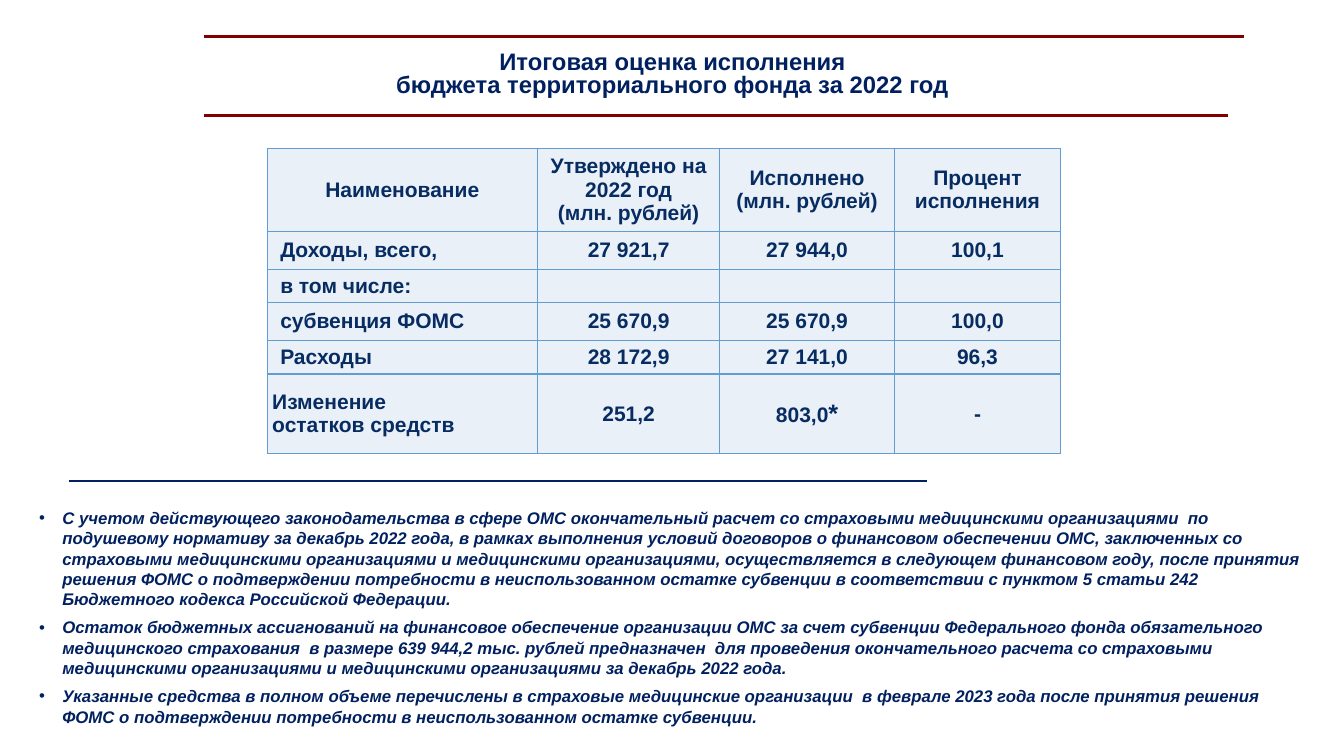
import pptx
import pptx.util
import pptx.dml.color
import pptx.enum.shapes
import pptx.enum.text
import pptx.oxml
import pptx.oxml.ns
from lxml import etree

Inches, Pt = pptx.util.Inches, pptx.util.Pt
ALIGN = pptx.enum.text.PP_ALIGN
MIDDLE = pptx.enum.text.MSO_ANCHOR.MIDDLE
qn = pptx.oxml.ns.qn
HUES = {"navy": "002060", "ink": "072C62", "red": "800000",
        "grid": "629DD1", "cell": "EAF0F7"}


def rgb(name):
    return pptx.dml.color.RGBColor.from_string(HUES[name])


def style(run, size, hue, slant=False):
    font = run.font
    font.name, font.size, font.bold = "Arial", Pt(size), True
    font.italic = slant
    font.color.rgb = rgb(hue)


deck = pptx.Presentation()
deck.slide_width, deck.slide_height = Inches(13.33), Inches(7.5)
slide = deck.slides.add_slide(deck.slide_layouts[6])

# Title
box = slide.shapes.add_textbox(Inches(0.67), Inches(0.5), Inches(12), Inches(0.49))
frame = box.text_frame
frame.word_wrap = True
frame.vertical_anchor = MIDDLE
frame.text = "Итоговая оценка исполнения\vбюджета территориального фонда за 2022 год"
title = frame.paragraphs[0]
title.alignment = ALIGN.CENTER
title.line_spacing = 0.8
for run in title.runs:
    style(run, 17, "navy")

# Budget table
rows = [
    ["Наименование", "Утверждено на 2022 год\n(млн. рублей)",
     "Исполнено\n(млн. рублей)", "Процент исполнения"],
    ["Доходы, всего,", "27 921,7", "27 944,0", "100,1"],
    ["в том числе:", "", "", ""],
    ["субвенция ФОМС", "25 670,9", "25 670,9", "100,0"],
    ["Расходы", "28 172,9", "27 141,0", "96,3"],
    ["Изменение\nостатков средств", "251,2", "803,0", "-"],
]
widths = [2.68, 1.81, 1.73, 1.65]
heights = [0.8, 0.37, 0.33, 0.38, 0.33, 0.79]
grid = slide.shapes.add_table(len(rows), len(widths), Inches(2.65), Inches(1.47),
                              Inches(sum(widths)), Inches(sum(heights))).table
for col, width in zip(grid.columns, widths):
    col.width = Inches(width)
for row, height in zip(grid.rows, heights):
    row.height = Inches(height)

last = len(rows) - 1
for r, texts in enumerate(rows):
    for c, text in enumerate(texts):
        cell = grid.cell(r, c)
        cell.vertical_anchor = MIDDLE
        side = 0.05 if (r, c) == (last, 0) else 0.13
        cell.margin_left = cell.margin_right = Inches(side)
        cell.margin_top = cell.margin_bottom = Inches(0.04 if text else 0)
        cell.text_frame.text = text
        for para in cell.text_frame.paragraphs:
            para.alignment = ALIGN.LEFT if r and c == 0 else ALIGN.CENTER
            for run in para.runs:
                style(run, 15, "ink")
        # Borders come before the fill in the cell's XML
        props = cell._tc.get_or_add_tcPr()
        for edge in ("a:lnL", "a:lnR", "a:lnT", "a:lnB"):
            line = etree.SubElement(props, qn(edge), w=str(Pt(1)))
            paint = etree.SubElement(line, qn("a:solidFill"))
            etree.SubElement(paint, qn("a:srgbClr"), val=HUES["grid"])
        cell.fill.solid()
        cell.fill.fore_color.rgb = rgb("cell")

# Footnote star
star = grid.cell(last, 2).text_frame.paragraphs[0].add_run()
star.text = "*"
style(star, 18, "ink")

# Rules
for left, right, top, hue, weight in [(2.02, 12.34, 0.36, "red", 2.25),
                                      (2.02, 12.18, 1.15, "red", 2.25),
                                      (0.68, 9.19, 4.77, "navy", 1.5)]:
    rule = slide.shapes.add_connector(pptx.enum.shapes.MSO_CONNECTOR.STRAIGHT,
                                      Inches(left), Inches(top), Inches(right), Inches(top))
    rule.line.color.rgb = rgb(hue)
    rule.line.width = Pt(weight)
    etree.SubElement(rule._element.spPr, qn("a:effectLst"))

# Footnotes
notes = [
    "С учетом действующего законодательства в сфере ОМС окончательный расчет со страховыми "
    "медицинскими организациями  по подушевому нормативу за декабрь 2022 года, в рамках "
    "выполнения условий договоров о финансовом обеспечении ОМС, заключенных со страховыми "
    "медицинскими организациями и медицинскими организациями, осуществляется в следующем "
    "финансовом году, после принятия решения ФОМС о подтверждении потребности в "
    "неиспользованном остатке субвенции в соответствии с пунктом 5 статьи 242 Бюджетного "
    "кодекса Российской Федерации.",
    "Остаток бюджетных ассигнований на финансовое обеспечение организации ОМС за счет "
    "субвенции Федерального фонда обязательного медицинского страхования  в размере "
    "639 944,2 тыс. рублей предназначен  для проведения окончательного расчета со страховыми "
    "медицинскими организациями и медицинскими организациями за декабрь 2022 года.",
    "Указанные средства в полном объеме перечислены в страховые медицинские организации  "
    "в феврале 2023 года после принятия решения ФОМС о подтверждении потребности в "
    "неиспользованном остатке субвенции.",
]
box = slide.shapes.add_textbox(Inches(0.29), Inches(4.99), Inches(12.84), Inches(2.29))
frame = box.text_frame
frame.word_wrap = True
frame.text = "\n".join(notes)
for para in frame.paragraphs:
    para.space_after = Pt(6)
    props = para._p.get_or_add_pPr()
    props.set("marL", str(Inches(0.23)))
    props.set("indent", str(-Inches(0.23)))
    etree.SubElement(props, qn("a:buFont"), typeface="Arial")
    etree.SubElement(props, qn("a:buChar"), char="•")
    style(para.runs[0], 12, "navy", slant=True)

deck.save("out.pptx")
